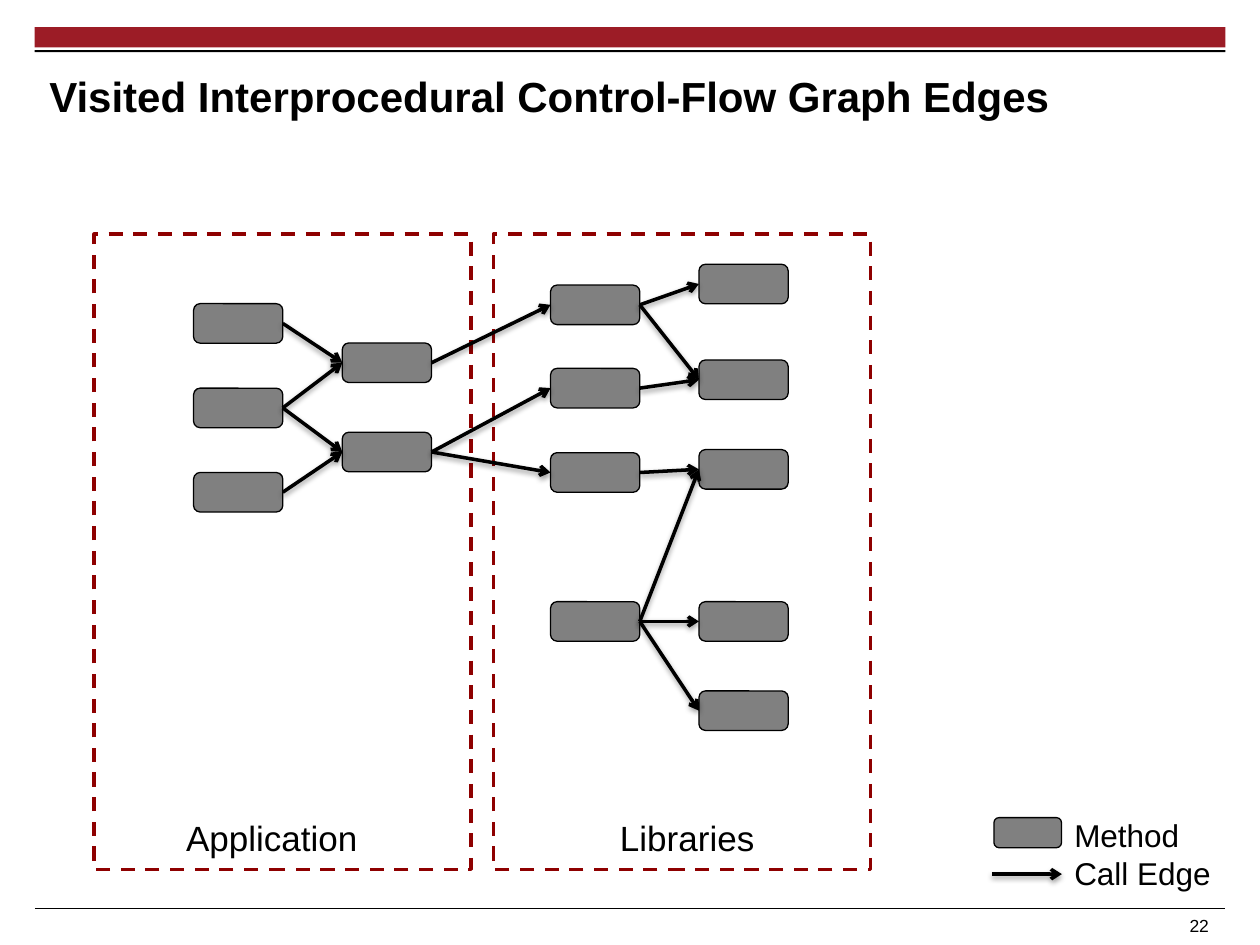
"""Builds the slide of call edges visited between application and library methods."""
from lxml import etree
from pptx import Presentation
from pptx.dml.color import RGBColor as RGB
from pptx.enum import dml, shapes, text
from pptx.oxml import ns
from pptx.util import Pt


class Theme:
    font = "Arial"
    ink = RGB(0, 0, 0)
    band = RGB(0x9C, 0x1C, 0x26)
    frame = RGB(0x8E, 0, 0)
    node = RGB(0x80, 0x80, 0x80)
    title, label, key, page = 24, 20, 18, 10


SHADOW = (
    f'<a:effectLst {ns.nsdecls("a")}><a:outerShdw blurRad="40000" dist="20000" '
    'dir="5400000" rotWithShape="0"><a:srgbClr val="000000">'
    '<a:alpha val="38000"/></a:srgbClr></a:outerShdw></a:effectLst>'
)

deck = Presentation()
deck.slide_width, deck.slide_height = Pt(720), Pt(540)
slide = deck.slides.add_slide(deck.slide_layouts[5])
KIND = shapes.MSO_SHAPE


def block(kind, box, fill=None, line=None, width=0.75):
    item = slide.shapes.add_shape(kind, *map(Pt, box))
    item.shadow.inherit = False
    if fill is None:
        item.fill.background()
    else:
        item.fill.solid()
        item.fill.fore_color.rgb = fill
    if line is None:
        item.line.fill.background()
    else:
        item.line.color.rgb = line
        item.line.width = Pt(width)
    return item


def write(item, words, size, align=text.PP_ALIGN.LEFT, bold=False):
    item.text_frame.text = words
    for para in item.text_frame.paragraphs:
        para.alignment = align
        for run in para.runs:
            run.font.name = Theme.font
            run.font.size = Pt(size)
            run.font.bold = bold
            run.font.color.rgb = Theme.ink


block(KIND.RECTANGLE, (19.8, 15.6, 680.4, 11.5), Theme.band)
block(KIND.RECTANGLE, (19.8, 28.6, 680.4, 1.2), Theme.ink)

title = slide.shapes.title
title.left, title.top, title.width, title.height = map(Pt, (28.2, 31.7, 671.8, 45.4))
write(title, "Visited Interprocedural Control-Flow Graph Edges", Theme.title, bold=True)
frame = title.text_frame
frame.vertical_anchor = text.MSO_ANCHOR.MIDDLE
frame.margin_left = frame.margin_right = frame.margin_top = frame.margin_bottom = 0

for left in (53.8, 282):
    zone = block(KIND.RECTANGLE, (left, 133.8, 215.4, 363), line=Theme.frame, width=2)
    zone.line.dash_style = dml.MSO_LINE.DASH

columns = {
    "a": (110.6, (173.5, 221.8, 270)),
    "b": (195.6, (196, 247)),
    "c": (314.6, (162.9, 210.5, 258.7, 343.8)),
    "d": (399.4, (151, 205.7, 256.9, 343.8, 394.8)),
}
nodes = {}
for name, (left, tops) in columns.items():
    for row, top in enumerate(tops, 1):
        box = (left, top, 51, 22.6)
        nodes[f"{name}{row}"] = block(KIND.ROUNDED_RECTANGLE, box, Theme.node, Theme.ink)

calls = (
    "a1-b1 a2-b1 a2-b2 a3-b2 b1-c1 b2-c2 b2-c3 "
    "c1-d1 c1-d2 c2-d2 c3-d3 c4-d3 c4-d4 c4-d5"
)
STRAIGHT = shapes.MSO_CONNECTOR.STRAIGHT
edges = []
for call in calls.split():
    start, end = call.split("-")
    edge = slide.shapes.add_connector(STRAIGHT, 0, 0, 0, 0)
    edge.begin_connect(nodes[start], 3)
    edge.end_connect(nodes[end], 1)
    edges.append(edge)

block(KIND.ROUNDED_RECTANGLE, (568, 467.2, 38.6, 17.2), Theme.node, Theme.ink)
edges.append(slide.shapes.add_connector(STRAIGHT, *map(Pt, (566.8, 499.5, 606.8, 499.5))))
rule = slide.shapes.add_connector(STRAIGHT, *map(Pt, (20, 519.4, 700.2, 519.4)))

for line in (*edges, rule):
    line.line.color.rgb = Theme.ink
    line.line.width = Pt(0.6 if line is rule else 2)
    props = line._element.spPr
    if line is rule:
        etree.SubElement(props, ns.qn("a:effectLst"))
    else:
        etree.SubElement(line.line._get_or_add_ln(), ns.qn("a:tailEnd"), type="arrow")
        props.append(etree.fromstring(SHADOW))

LEFT, RIGHT = text.PP_ALIGN.LEFT, text.PP_ALIGN.RIGHT
labels = (
    ("Application", (99.2, 463, 113.8, 31.5), Theme.label, LEFT),
    ("Libraries", (347.2, 463, 92.2, 31.5), Theme.label, LEFT),
    ("Method\nCall Edge", (606.8, 463, 93.6, 51), Theme.key, LEFT),
    ("22 ", (133.2, 519.4, 567.4, 18), Theme.page, RIGHT),
)
for words, box, size, align in labels:
    label = slide.shapes.add_textbox(*map(Pt, box))
    label.text_frame.word_wrap = align == RIGHT
    write(label, words, size, align)

deck.save("out.pptx")
